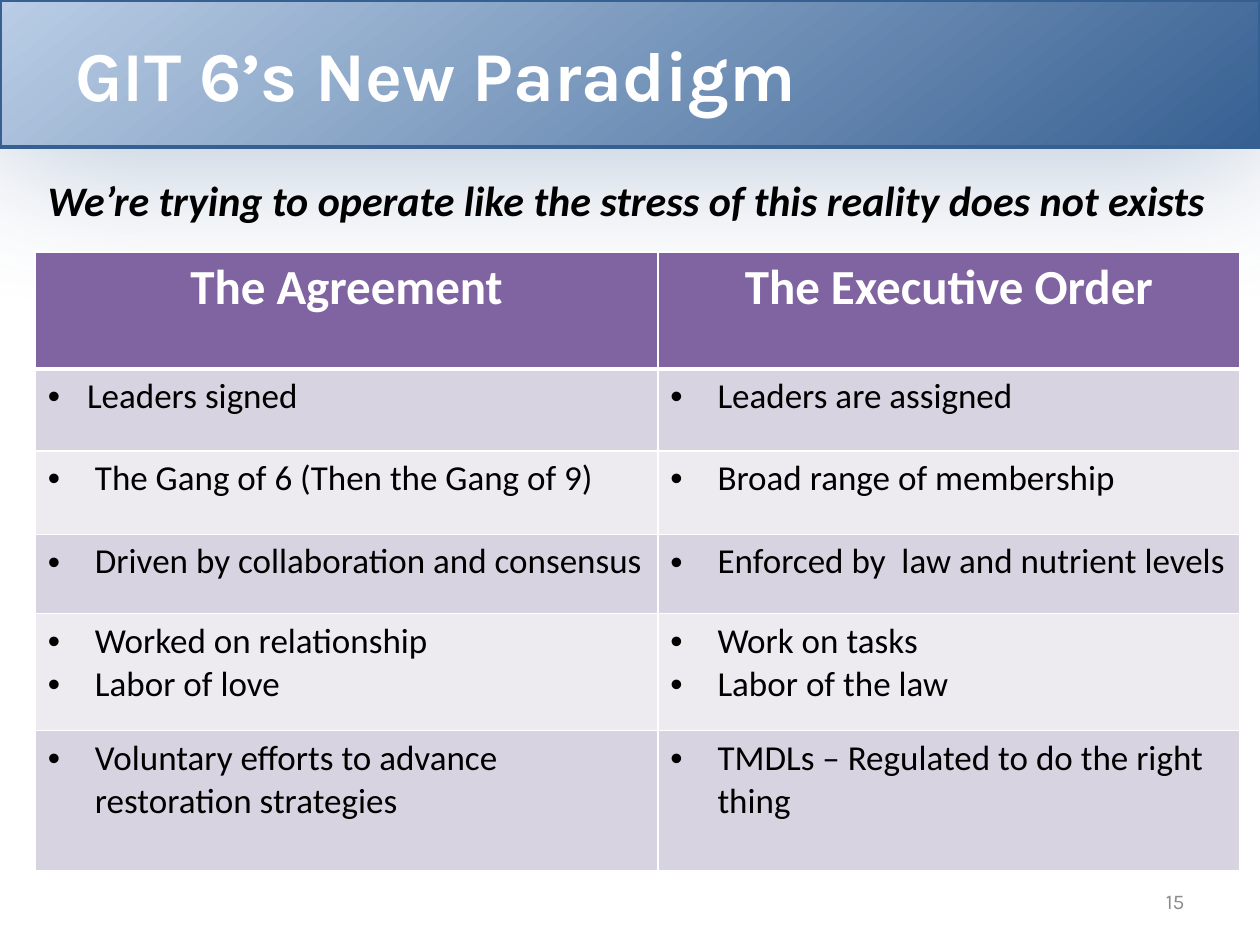
from lxml import etree
from pptx import Presentation
from pptx.dml.color import RGBColor
from pptx.enum import shapes, text
from pptx.oxml import parse_xml
from pptx.oxml.ns import nsdecls, qn
from pptx.util import Cm, Pt

NAVY, WHITE, BLACK = "376092", "FFFFFF", "000000"
PURPLE, BANDS = "8064A2", ("D8D3E0", "EDEAF0")
COLUMNS = (12.55, 11.73)
HEIGHTS = (2.36, 1.65, 1.68, 1.6, 2.36, 2.82)
HEADINGS = ("The Agreement", "The Executive Order")
ROWS = (
    ("Leaders signed", "Leaders are assigned"),
    ("The Gang of 6 (Then the Gang of 9)", "Broad range of membership"),
    ("Driven by collaboration and consensus",
     "Enforced by  law and nutrient levels"),
    ("Worked on relationship\nLabor of love", "Work on tasks\nLabor of the law"),
    ("Voluntary efforts to advance restoration strategies",
     "TMDLs – Regulated to do the right thing"),
)


def rgb(value):
    return RGBColor.from_string(value)


def write(tf, content, size, color, font="Calibri", bold=False, italic=False,
          align=text.PP_ALIGN.LEFT):
    tf.text = content
    tf.word_wrap = True
    for p in tf.paragraphs:
        p.alignment = align
        for r in p.runs:
            f = r.font
            f.name, f.size, f.bold, f.italic = font, Pt(size), bold, italic
            f.color.rgb = rgb(color)


def add_banner(s):
    """Put a shaded gradient bar behind the title."""
    sp = s.shapes.add_shape(shapes.MSO_SHAPE.RECTANGLE, 0, 0, Cm(25.4), Cm(2.97))
    sp.fill.gradient()
    sp.fill.gradient_angle = 309
    for stop, color in zip(sp.fill.gradient_stops, ("B9CDE5", NAVY)):
        stop.color.rgb = rgb(color)
    for stop, position in zip(sp.fill.gradient_stops, (0, 1)):
        stop.position = position
    sp.line.color.rgb = rgb(NAVY)
    sp.line.width = Pt(2)
    sp.shadow.inherit = False
    sp._element.spPr.find(qn("a:effectLst")).append(parse_xml(
        f'<a:outerShdw {nsdecls("a")} blurRad="{Pt(93.5)}" dist="{Pt(2)}" '
        f'dir="5400000" rotWithShape="0"><a:srgbClr val="{NAVY}">'
        '<a:alpha val="40000"/></a:srgbClr></a:outerShdw>'))
    s.shapes._spTree.insert(2, sp._element)


def add_title(s, content):
    sp = s.shapes.title
    sp.left, sp.top, sp.width, sp.height = Cm(1.27), 0, Cm(21.59), Cm(2.97)
    write(sp.text_frame, content, 40, WHITE, "Karla", bold=True)
    sp.text_frame.vertical_anchor = text.MSO_ANCHOR.MIDDLE


def add_text(s, box, content, size, color, **style):
    tf = s.shapes.add_textbox(*map(Cm, box)).text_frame
    write(tf, content, size, color, **style)
    return tf


def add_bullets(tf, indent):
    for p in tf.paragraphs:
        pPr = p._p.get_or_add_pPr()
        pPr.set("marL", str(Cm(indent)))
        pPr.set("indent", str(-Cm(indent)))
        etree.SubElement(pPr, qn("a:buFont"), typeface="Arial")
        etree.SubElement(pPr, qn("a:buChar"), char="•")


def set_borders(cell, top, bottom):
    tcPr = cell._tc.get_or_add_tcPr()
    sides = (("L", 1), ("R", 1), ("T", top), ("B", bottom))
    for i, (side, width) in enumerate(sides):
        tcPr.insert(i, parse_xml(
            f'<a:ln{side} {nsdecls("a")} w="{Pt(width)}"><a:solidFill>'
            f'<a:srgbClr val="{WHITE}"/></a:solidFill></a:ln{side}>'))


def add_comparison(s):
    table = s.shapes.add_table(len(HEIGHTS), len(COLUMNS), Cm(0.71), Cm(5.08),
                               Cm(sum(COLUMNS)), Cm(sum(HEIGHTS))).table
    for column, width in zip(table.columns, COLUMNS):
        column.width = Cm(width)
    for row, height in zip(table.rows, HEIGHTS):
        row.height = Cm(height)
    for i, contents in enumerate((HEADINGS, *ROWS)):
        for j, content in enumerate(contents):
            cell = table.cell(i, j)
            cell.fill.solid()
            cell.fill.fore_color.rgb = rgb(BANDS[(i - 1) % 2] if i else PURPLE)
            set_borders(cell, 3 if i == 1 else 1, 1 if i else 3)
            if i == 0:
                write(cell.text_frame, content, 28, WHITE, bold=True,
                      align=text.PP_ALIGN.CENTER)
            else:
                write(cell.text_frame, content, 20, BLACK)
                add_bullets(cell.text_frame, 0.79 if (i, j) == (1, 0) else 0.95)


def main():
    prs = Presentation()
    prs.slide_width, prs.slide_height = Cm(25.4), Cm(19.05)
    s = prs.slides.add_slide(prs.slide_layouts[5])
    add_banner(s)
    add_title(s, "GIT 6’s New Paradigm")
    number = add_text(s, (18.2, 17.66, 5.93, 1.01), "15", 12, "8C8C8C",
                      font="Karla", align=text.PP_ALIGN.RIGHT)
    number.vertical_anchor = text.MSO_ANCHOR.MIDDLE
    add_comparison(s)
    add_text(s, (0.71, 3.4, 24.69, 1.28),
             "We’re trying to operate like the stress of this reality does not exists",
             24, BLACK, bold=True, italic=True)
    prs.save("out.pptx")


if __name__ == "__main__":
    main()
